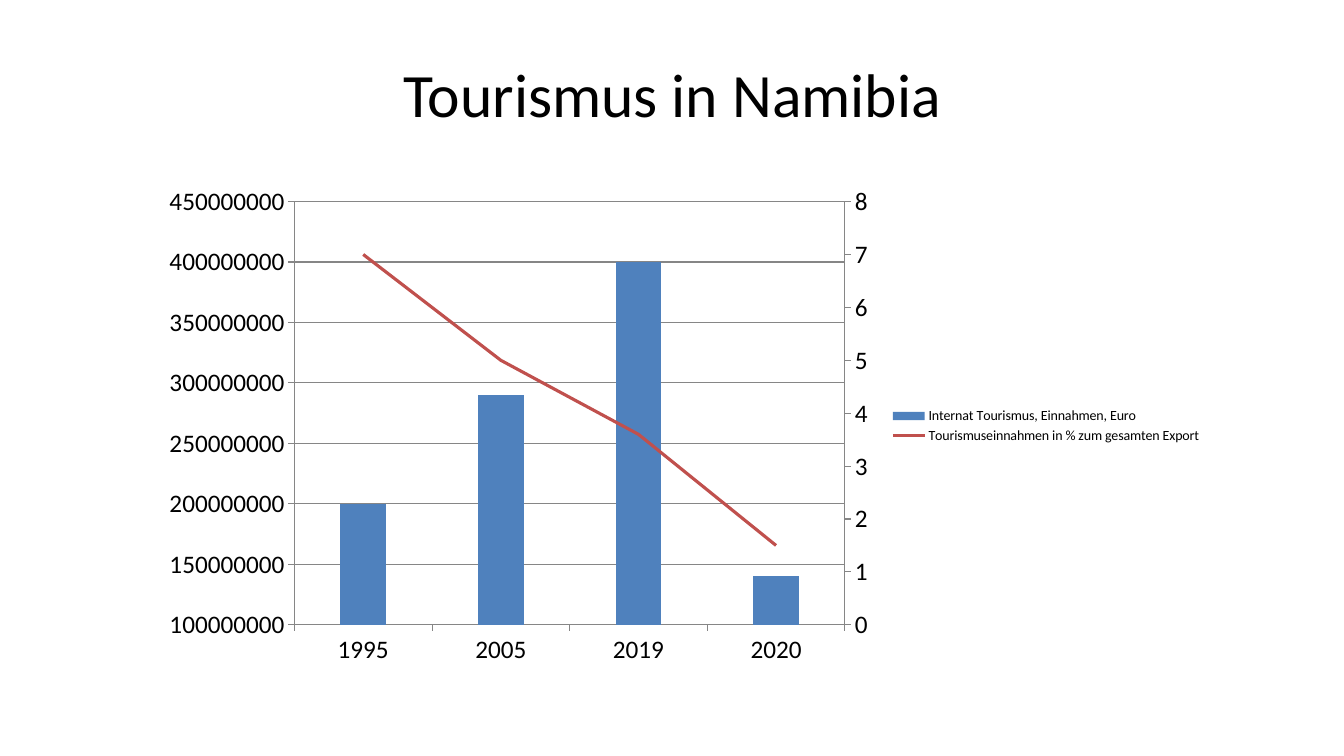
from lxml import etree
from pptx import Presentation
from pptx.chart.data import CategoryChartData
from pptx.dml.color import RGBColor
from pptx.enum.chart import XL_CHART_TYPE, XL_LEGEND_POSITION, XL_MARKER_STYLE, XL_TICK_MARK
from pptx.enum.text import MSO_ANCHOR, PP_ALIGN
from pptx.oxml import parse_xml
from pptx.util import Inches, Pt

COLUMNS = XL_CHART_TYPE.COLUMN_CLUSTERED
LEGEND_RIGHT = XL_LEGEND_POSITION.RIGHT
NO_MARKER = XL_MARKER_STYLE.NONE
TICK_OUT, TICK_NONE = XL_TICK_MARK.OUTSIDE, XL_TICK_MARK.NONE
MIDDLE = MSO_ANCHOR.MIDDLE
CENTER = PP_ALIGN.CENTER

FONT = "Calibri"
COLORS = {"text": "000000", "income": "4F81BD", "share": "C0504D", "grid": "868686"}
C_NS = "http://schemas.openxmlformats.org/drawingml/2006/chart"
A_NS = "http://schemas.openxmlformats.org/drawingml/2006/main"
C = "{%s}" % C_NS

YEARS = ["1995", "2005", "2019", "2020"]
INCOME = ("Internat Tourismus, Einnahmen, Euro",
          [200000000, 290000000, 400000000, 140000000])
SHARE = ("Tourismuseinnahmen in % zum gesamten Export", [7, 5, 3.6, 1.5])
CHART_WIDTH, CHART_HEIGHT = 10.55, 4.95
PLOT_LAYOUT = {"x": 1.45 / CHART_WIDTH, "y": 0.25 / CHART_HEIGHT,
               "w": 5.46 / CHART_WIDTH, "h": 4.2 / CHART_HEIGHT}

LINE_CHART = f"""<c:lineChart xmlns:c="{C_NS}">
  <c:grouping val="standard"/><c:varyColors val="0"/>
  <c:marker val="1"/><c:axId val="5001"/><c:axId val="5002"/>
</c:lineChart>"""
RIGHT_AXES = f"""<c:plotArea xmlns:c="{C_NS}" xmlns:a="{A_NS}">
  <c:valAx><c:axId val="5002"/>
    <c:scaling><c:orientation val="minMax"/></c:scaling>
    <c:delete val="0"/><c:axPos val="r"/>
    <c:numFmt formatCode="General" sourceLinked="0"/>
    <c:majorTickMark val="out"/><c:minorTickMark val="none"/>
    <c:tickLblPos val="nextTo"/>
    <c:spPr><a:ln w="9525"><a:solidFill><a:srgbClr val="{COLORS['grid']}"/></a:solidFill></a:ln></c:spPr>
    <c:crossAx val="5001"/><c:crosses val="max"/>
    <c:crossBetween val="between"/><c:majorUnit val="1"/></c:valAx>
  <c:catAx><c:axId val="5001"/>
    <c:scaling><c:orientation val="minMax"/></c:scaling>
    <c:delete val="1"/><c:axPos val="b"/>
    <c:majorTickMark val="none"/><c:minorTickMark val="none"/>
    <c:tickLblPos val="nextTo"/>
    <c:crossAx val="5002"/><c:crosses val="autoZero"/></c:catAx>
</c:plotArea>"""


def rgb(name):
    return RGBColor.from_string(COLORS[name])


def apply(target, values):
    for name, value in values.items():
        setattr(target, name, value)


class SlideBuilder:
    def __init__(self, prs):
        self.slide = prs.slides.add_slide(prs.slide_layouts[5])

    def set_font(self, font, size):
        apply(font, {"name": FONT, "size": Pt(size), "bold": False})
        font.color.rgb = rgb("text")

    def set_line(self, line, color, width):
        line.color.rgb = rgb(color)
        line.width = Pt(width)

    def title(self, text, left, top, width, height):
        sp = self.slide.shapes.title
        apply(sp, {"left": Inches(left), "top": Inches(top),
                   "width": Inches(width), "height": Inches(height)})
        tf = sp.text_frame
        apply(tf, {"text": text, "vertical_anchor": MIDDLE, "word_wrap": True})
        p = tf.paragraphs[0]
        p.alignment = CENTER
        self.set_font(p.runs[0].font, 44)

    def combo_chart(self, left, top, width, height):
        data = CategoryChartData()
        data.categories = YEARS
        for name, values in (INCOME, SHARE):
            data.add_series(name, values)
        chart = self.slide.shapes.add_chart(
            COLUMNS, Inches(left), Inches(top), Inches(width), Inches(height), data).chart
        apply(chart, {"has_title": False, "has_legend": True})
        self.set_font(chart.font, 18)
        apply(chart.legend, {"position": LEGEND_RIGHT, "include_in_layout": False})
        self.set_font(chart.legend.font, 10)
        self.format_axes(chart)
        self.move_to_right_axis(chart)
        self.format_series(chart)

    def format_axes(self, chart):
        for axis in (chart.category_axis, chart.value_axis):
            apply(axis, {"major_tick_mark": TICK_OUT, "minor_tick_mark": TICK_NONE})
            apply(axis.tick_labels, {"number_format": "General",
                                     "number_format_is_linked": False})
            self.set_line(axis.format.line, "grid", 0.75)
        apply(chart.value_axis, {"minimum_scale": 100000000, "maximum_scale": 450000000,
                                 "major_unit": 50000000, "has_major_gridlines": True})
        self.set_line(chart.value_axis.major_gridlines.format.line, "grid", 0.75)
        chart.category_axis.has_major_gridlines = False

    def move_to_right_axis(self, chart):
        bars = chart.plots[0]._element
        area = bars.getparent()
        ser = bars.findall(C + "ser")[1]
        for flag in ser.findall(C + "invertIfNegative"):
            ser.remove(flag)
        lines = parse_xml(LINE_CHART)
        lines.insert(2, ser)
        bars.addnext(lines)
        last_axis = area.findall(C + "valAx")[-1]
        for axis in reversed(list(parse_xml(RIGHT_AXES))):
            last_axis.addnext(axis)
        for layout in area.findall(C + "layout"):
            area.remove(layout)
        layout = etree.Element(C + "layout")
        manual = etree.SubElement(layout, C + "manualLayout")
        settings = {"layoutTarget": "inner", "xMode": "edge", "yMode": "edge", **PLOT_LAYOUT}
        for name, value in settings.items():
            etree.SubElement(manual, C + name).set("val", str(value))
        area.insert(0, layout)

    def format_series(self, chart):
        bars, lines = chart.plots
        apply(bars, {"gap_width": 200, "overlap": 27, "vary_by_categories": False})
        fill = bars.series[0].format.fill
        fill.solid()
        fill.fore_color.rgb = rgb("income")
        share = lines.series[0]
        share.smooth = False
        share.marker.style = NO_MARKER
        self.set_line(share.format.line, "share", 2.25)


def main():
    prs = Presentation()
    apply(prs, {"slide_width": Inches(13.33), "slide_height": Inches(7.5)})
    s = SlideBuilder(prs)
    s.title("Tourismus in Namibia", 0.67, 0.3, 12, 1.25)
    s.combo_chart(1.47, 1.75, CHART_WIDTH, CHART_HEIGHT)
    prs.save("out.pptx")


if __name__ == "__main__":
    main()
